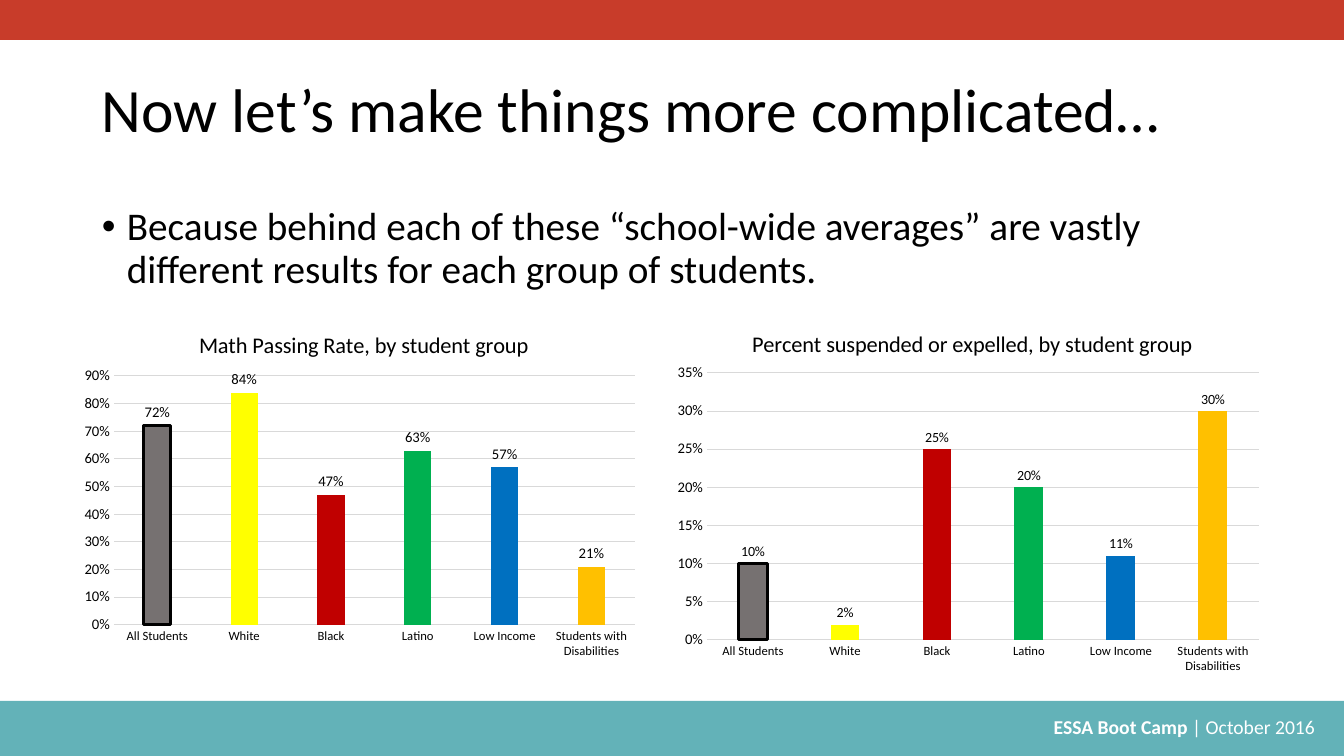
from lxml.etree import SubElement as Sub
from pptx import Presentation as Deck
from pptx.chart.data import CategoryChartData as Data
from pptx.dml.color import RGBColor as Color
from pptx.enum.chart import XL_CHART_TYPE as Kind, XL_LABEL_POSITION as Spot, XL_TICK_MARK as Tick
from pptx.enum.shapes import MSO_SHAPE as Form
from pptx.enum.text import MSO_ANCHOR as Anchor, PP_ALIGN as Align
from pptx.oxml.ns import qn
from pptx.util import Pt

SCALE = 914400 / 100.8
SIZE = (1344, 756)
THEME = {
    "font": "Calibri", "ink": "000000", "paper": "FFFFFF", "grid": "D9D9D9",
    "top": "C83C2A", "foot": "63B2B8", "base": "5B9BD5",
    "head": 44, "body": 28, "note": 14, "title": 16, "value": 10.5, "group": 9,
}
BANDS = [((0, 0, 1344, 40), "top"), ((0, 701, 1344, 55), "foot")]
TEXTS = [
    {"box": (92, 40, 1159, 146), "runs": [("Now let’s make things more complicated…", False)],
     "size": "head", "color": "ink", "frame": {"vertical_anchor": Anchor.MIDDLE},
     "para": {"line_spacing": 0.9}},
    {"box": (92, 202, 1159, 480), "bullet": 25,
     "runs": [("Because behind each of these “school-wide averages” are vastly "
               "different results for each group of students.", False)],
     "size": "body", "color": "ink", "frame": {"vertical_anchor": Anchor.TOP},
     "para": {"line_spacing": 0.9, "space_before": Pt(10)}},
    {"box": (484, 710, 841, 34),
     "runs": [("ESSA Boot Camp ", True), ("| October 2016", False)],
     "size": "note", "color": "paper", "frame": {"vertical_anchor": Anchor.TOP},
     "para": {"alignment": Align.RIGHT}},
]
GROUPS = [("All Students", "767171"), ("White", "FFFF00"), ("Black", "C00000"),
          ("Latino", "00B050"), ("Low Income", "0070C0"),
          ("Students with Disabilities", "FFC000")]
CHARTS = [
    {"title": "Math Passing Rate, by student group", "label": 10.5,
     "box": (74, 306, 572, 359), "plot": (114, 376, 521, 249), "head": (195, 326),
     "axis": {"minimum_scale": 0, "maximum_scale": 0.9, "major_unit": 0.1},
     "rates": (0.72, 0.84, 0.47, 0.63, 0.57, 0.21)},
    {"title": "Percent suspended or expelled, by student group", "label": 10,
     "box": (665, 306, 606, 375), "plot": (707, 373, 552, 267), "head": (748, 325),
     "axis": {"minimum_scale": 0, "maximum_scale": 0.35, "major_unit": 0.05},
     "rates": (0.1, 0.02, 0.25, 0.2, 0.11, 0.3)},
]


def put(item, values):
    for key, value in values.items():
        setattr(item, key, value)


def px(*nums):
    return [round(num * SCALE) for num in nums]


def hue(key):
    return Color.from_string(THEME.get(key, key))


def paint(fill, key):
    fill.solid()
    fill.fore_color.rgb = hue(key)


def style(font, size, color="ink", bold=False):
    put(font, {"name": THEME["font"], "size": Pt(size), "bold": bold})
    font.color.rgb = hue(color)


def stroke(line, key, width):
    line.color.rgb = hue(key)
    line.width = Pt(width)


def band(slide, box, key):
    shape = slide.shapes.add_shape(Form.RECTANGLE, *px(*box))
    shape.shadow.inherit = False
    paint(shape.fill, key)
    shape.line.fill.background()


def write(slide, text):
    frame = slide.shapes.add_textbox(*px(*text["box"])).text_frame
    put(frame, {"word_wrap": True, **text["frame"]})
    para = frame.paragraphs[0]
    put(para, text["para"])
    for words, bold in text["runs"]:
        run = para.add_run()
        run.text = words
        style(run.font, THEME[text["size"]], text["color"], bold)
    if "bullet" in text:
        props = para._p.get_or_add_pPr()
        step = px(text["bullet"])[0]
        props.set("marL", str(step))
        props.set("indent", str(-step))
        Sub(props, qn("a:buFont"), typeface="Arial")
        Sub(props, qn("a:buChar"), char="•")


def place(node, box, spot, inner=False):
    left, top, wide, high = box
    parts = [(spot[0] - left) / wide, (spot[1] - top) / high]
    parts += [size / full for size, full in zip(spot[2:], (wide, high))]
    layout = node.find(qn("c:layout"))
    if layout is None:
        layout = Sub(node, qn("c:layout"))
        node.remove(layout)
        node.insert(1 if node.find(qn("c:tx")) is not None else 0, layout)
    hand = Sub(layout, qn("c:manualLayout"))
    if inner:
        Sub(hand, qn("c:layoutTarget"), val="inner")
    for mode in ("xMode", "yMode"):
        Sub(hand, qn("c:" + mode), val="edge")
    for name, part in zip("xywh", parts):
        Sub(hand, qn("c:" + name), val=f"{part:.4f}")


def graph(slide, item):
    data = Data(number_format="0%")
    data.categories = [name for name, _ in GROUPS]
    data.add_series("Series 1", item["rates"])
    chart = slide.shapes.add_chart(Kind.COLUMN_CLUSTERED, *px(*item["box"]), data).chart
    style(chart.font, 10)
    put(chart, {"has_legend": False, "has_title": True})
    para = chart.chart_title.text_frame.paragraphs[0]
    run = para.add_run()
    run.text = item["title"]
    style(run.font, THEME["title"])
    place(chart.chart_title._element, item["box"], item["head"])
    place(chart._chartSpace.chart.plotArea, item["box"], item["plot"], True)

    ticks = {"major_tick_mark": Tick.NONE, "minor_tick_mark": Tick.NONE}
    groups, rates = chart.category_axis, chart.value_axis
    put(groups, ticks)
    put(rates, {**ticks, **item["axis"], "has_major_gridlines": True})
    style(groups.tick_labels.font, THEME["group"])
    style(rates.tick_labels.font, THEME["value"])
    put(rates.tick_labels, {"number_format": "0%", "number_format_is_linked": False})
    for line in (groups.format.line, rates.major_gridlines.format.line):
        stroke(line, "grid", 0.75)
    rates.format.line.fill.background()

    plot = chart.plots[0]
    put(plot, {"gap_width": 219, "overlap": -27, "vary_by_categories": False,
               "has_data_labels": True})
    labels = plot.series[0].data_labels
    put(labels, {"show_value": True, "position": Spot.OUTSIDE_END,
                 "number_format": "0%", "number_format_is_linked": False})
    style(labels.font, item["label"])
    bars = plot.series[0]
    paint(bars.format.fill, "base")
    for spot, (_, color) in enumerate(GROUPS):
        paint(bars.points[spot].format.fill, color)
    stroke(bars.points[0].format.line, "ink", 2.25)


def main():
    deck = Deck()
    wide, high = px(*SIZE)
    put(deck, {"slide_width": wide, "slide_height": high})
    slide = deck.slides.add_slide(deck.slide_layouts[6])
    for box, key in BANDS:
        band(slide, box, key)
    for text in TEXTS:
        write(slide, text)
    for item in CHARTS:
        graph(slide, item)
    deck.save("out.pptx")


if __name__ == "__main__":
    main()
